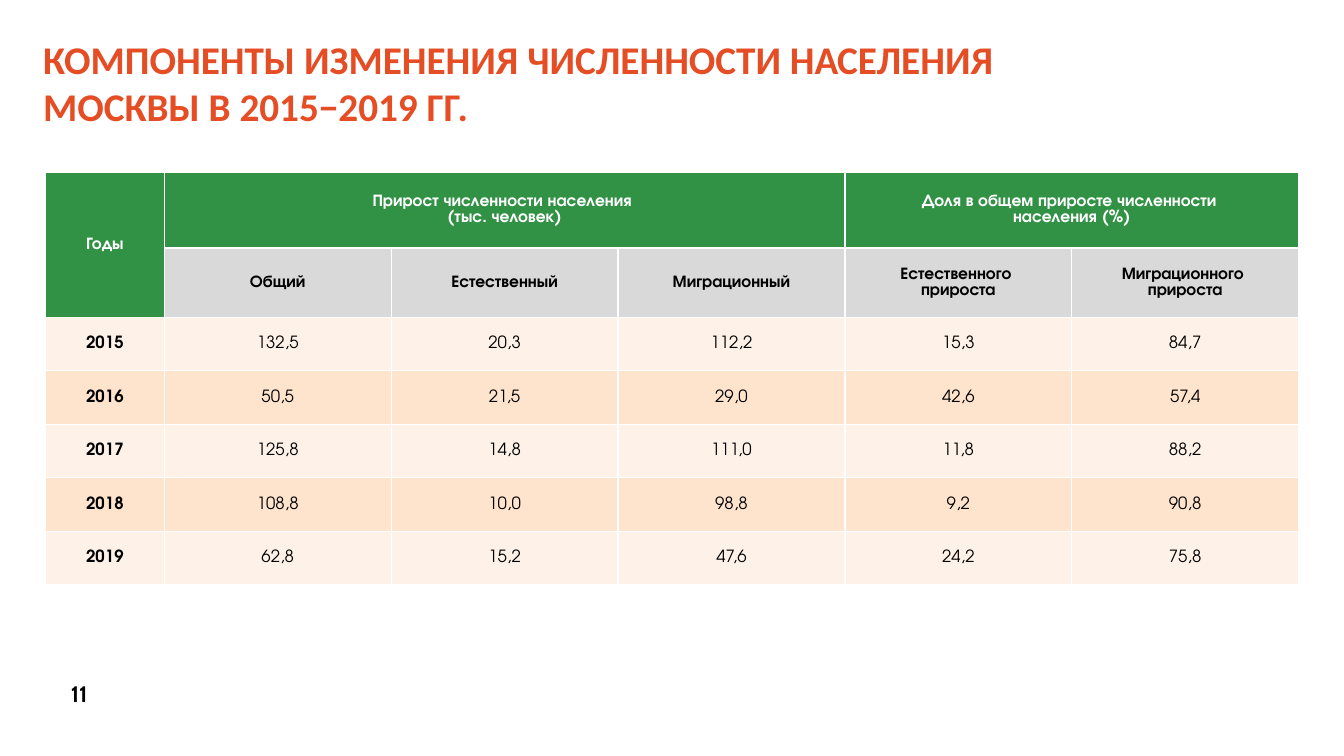
from copy import deepcopy
from dataclasses import dataclass

from lxml import etree
from pptx import Presentation
from pptx.dml.color import RGBColor
from pptx.enum.text import MSO_ANCHOR, PP_ALIGN
from pptx.oxml.ns import qn
from pptx.util import Inches, Pt

LEFT, CENTER = PP_ALIGN.LEFT, PP_ALIGN.CENTER
MIDDLE = MSO_ANCHOR.MIDDLE


@dataclass(frozen=True)
class Theme:
    """Colours, fonts and type sizes of the slide."""
    title: str = "E54D25"
    head: str = "319144"
    subhead: str = "D9D9D9"
    bands: tuple = ("FEF2E8", "FEE4CD")
    white: str = "FFFFFF"
    black: str = "000000"
    title_font: str = "Calibri"
    table_font: str = "TeX Gyre Adventor"
    page_font: str = "Cabin"
    title_size: int = 28
    table_size: int = 12
    page_size: int = 16


THEME = Theme()
TITLE = "КОМПОНЕНТЫ ИЗМЕНЕНИЯ ЧИСЛЕННОСТИ НАСЕЛЕНИЯ \vМОСКВЫ В 2015−2019 ГГ."
GROUPS = [
    "Годы",
    "Прирост численности населения \v(тыс. человек)", "", "",
    "Доля в общем приросте численности \vнаселения (%)", "",
]
LABELS = ["", "Общий", "Естественный", "Миграционный",
          "Естественного \vприроста", "Миграционного \vприроста"]
YEARS = [
    ["2015", "132,5", "20,3", "112,2", "15,3", "84,7"],
    ["2016", "50,5", "21,5", "29,0", "42,6", "57,4"],
    ["2017", "125,8", "14,8", "111,0", "11,8", "88,2"],
    ["2018", "108,8", "10,0", "98,8", "9,2", "90,8"],
    ["2019", "62,8", "15,2", "47,6", "24,2", "75,8"],
]
MERGES = [((0, 0), (1, 0)), ((0, 1), (0, 3)), ((0, 4), (0, 5))]
WIDTHS = [1.18] + [2.25] * 5
HEIGHTS = [0.75, 0.69] + [0.53] * 5


def write(frame, text, *, font, size, color, bold=True, align=LEFT):
    """Put one formatted paragraph into a text frame."""
    para = frame.paragraphs[0]
    para.text = text
    para.alignment = align
    for run in para.runs:
        run.font.name = font
        run.font.size = Pt(size)
        run.font.bold = bold
        run.font.color.rgb = RGBColor.from_string(color)
    for brk in para._p.findall(qn("a:br")):
        brk.append(deepcopy(para.runs[0].font._element))


def add_text(slide, box, text, **style):
    """Add a wrapped text box at the given box."""
    frame = slide.shapes.add_textbox(*map(Inches, box)).text_frame
    frame.word_wrap = True
    write(frame, text, **style)


def add_edges(cell, color):
    """Draw a thin line on the four sides of a cell."""
    props = cell._tc.get_or_add_tcPr()
    for spot, side in enumerate(("lnL", "lnR", "lnT", "lnB")):
        line = etree.Element(qn(f"a:{side}"), w=str(Pt(1)))
        fill = etree.SubElement(line, qn("a:solidFill"))
        etree.SubElement(fill, qn("a:srgbClr"), val=color)
        props.insert(spot, line)


def cell_style(row, col):
    """Return fill, text colour and weight for a table position."""
    if row == 0 or (row == 1 and col == 0):
        return THEME.head, THEME.white, True
    if row == 1:
        return THEME.subhead, THEME.black, True
    return THEME.bands[row % 2], THEME.black, col == 0


def add_grid(slide, left, top):
    """Add the population table with its top left corner at a point."""
    rows = [GROUPS, LABELS, *YEARS]
    box = (left, top, sum(WIDTHS), sum(HEIGHTS))
    table = slide.shapes.add_table(
        len(rows), len(WIDTHS), *map(Inches, box)).table
    for col, width in zip(table.columns, WIDTHS):
        col.width = Inches(width)
    for row, height in zip(table.rows, HEIGHTS):
        row.height = Inches(height)
    for first, last in MERGES:
        table.cell(*first).merge(table.cell(*last))
    for r, texts in enumerate(rows):
        for c, text in enumerate(texts):
            cell = table.cell(r, c)
            fill, color, bold = cell_style(r, c)
            cell.fill.solid()
            cell.fill.fore_color.rgb = RGBColor.from_string(fill)
            cell.margin_left = cell.margin_right = Inches(0.04)
            cell.margin_top = cell.margin_bottom = 0
            cell.vertical_anchor = MIDDLE
            add_edges(cell, THEME.white)
            write(cell.text_frame, text, font=THEME.table_font,
                  size=THEME.table_size, color=color, bold=bold, align=CENTER)


def main():
    """Build the slide and save it."""
    deck = Presentation()
    deck.slide_width, deck.slide_height = Inches(13.33), Inches(7.5)
    slide = deck.slides.add_slide(deck.slide_layouts[6])
    add_text(slide, (0.51, 6.7, 0.55, 0.37), "11", font=THEME.page_font,
             size=THEME.page_size, color=THEME.black, align=CENTER)
    add_text(slide, (0.33, 0.3, 10.92, 1.04), TITLE, font=THEME.title_font,
             size=THEME.title_size, color=THEME.title)
    add_grid(slide, 0.45, 1.71)
    deck.save("out.pptx")


if __name__ == "__main__":
    main()
